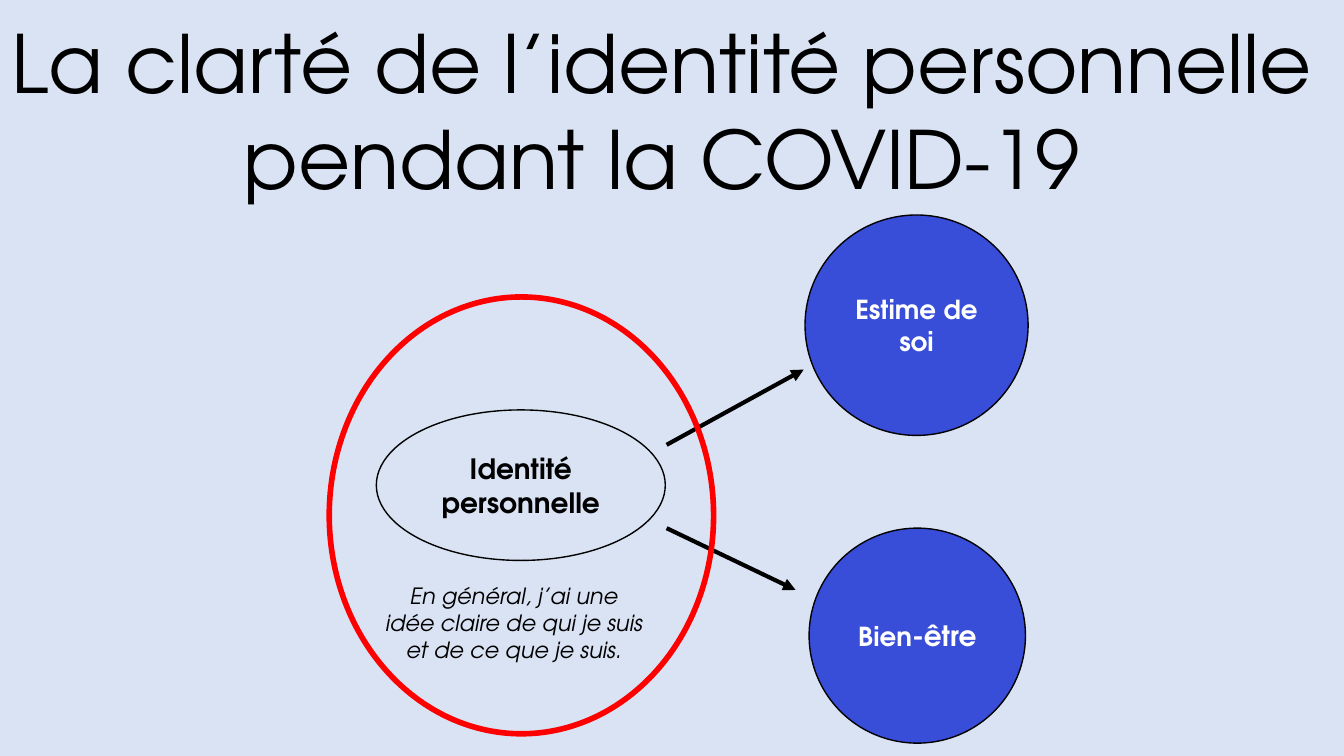
from lxml import etree
from pptx import Presentation
from pptx import util as u
from pptx.dml.color import RGBColor
from pptx.enum import shapes, text
from pptx.oxml import ns

FONT = "TeX Gyre Adventor"
SLIDE_WIDTH = 10
SLIDE_HEIGHT = SLIDE_WIDTH * 9 / 16
COLORS = {
    "background": "DAE3F3",
    "outcome": "384DD8",
    "ink": "000000",
    "light": "FFFFFF",
    "highlight": "FF0000",
}


def color(name):
    return RGBColor.from_string(COLORS[name])


def inches(values):
    return [u.Inches(value) for value in values]


def write(shape, runs, ink, anchor, bold=False, italic=False):
    """Fill a shape with one centred paragraph of (wording, size) runs."""
    frame = shape.text_frame
    frame.word_wrap = True
    frame.vertical_anchor = anchor
    frame.margin_left = frame.margin_right = u.Inches(0.1)
    frame.margin_top = frame.margin_bottom = u.Inches(0.1)
    paragraph = frame.paragraphs[0]
    paragraph.alignment = text.PP_ALIGN.CENTER
    for wording, size in runs:
        run = paragraph.add_run()
        run.text = wording
        run.font.name = FONT
        run.font.size = u.Pt(size)
        run.font.bold = bold
        run.font.italic = italic
        run.font.color.rgb = color(ink)


def add_panel(slide, kind, box, fill=None, line=None, width=0.75):
    panel = slide.shapes.add_shape(kind, *inches(box))
    panel.shadow.inherit = False
    if fill:
        panel.fill.solid()
        panel.fill.fore_color.rgb = color(fill)
    else:
        panel.fill.background()
    if line:
        panel.line.color.rgb = color(line)
        panel.line.width = u.Pt(width)
    else:
        panel.line.fill.background()
    return panel


def add_title(slide, wording):
    title = add_panel(slide, shapes.MSO_SHAPE.RECTANGLE,
                      (-0.15, 0, SLIDE_WIDTH + 0.15, SLIDE_HEIGHT),
                      "background")
    write(title, [(wording, 43)], "ink", text.MSO_ANCHOR.TOP)


def add_concept(slide, box, runs, fill, ink):
    concept = add_panel(slide, shapes.MSO_SHAPE.OVAL, box, fill, "ink")
    write(concept, runs, ink, text.MSO_ANCHOR.MIDDLE, bold=True)


def add_arrow(slide, start, end):
    arrow = slide.shapes.add_connector(
        shapes.MSO_CONNECTOR.STRAIGHT, *inches(start + end))
    arrow.line.color.rgb = color("ink")
    arrow.line.width = u.Pt(2.25)
    properties = arrow._element.spPr
    etree.SubElement(properties.find(ns.qn("a:ln")), ns.qn("a:tailEnd"),
                     type="triangle")
    etree.SubElement(properties, ns.qn("a:effectLst"))


def add_statement(slide, box, wording):
    statement = slide.shapes.add_textbox(*inches(box))
    write(statement, [(wording, 12)], "ink", text.MSO_ANCHOR.TOP, italic=True)
    statement.text_frame.auto_size = text.MSO_AUTO_SIZE.SHAPE_TO_FIT_TEXT


def main():
    deck = Presentation()
    deck.slide_width, deck.slide_height = inches((SLIDE_WIDTH, SLIDE_HEIGHT))
    slide = deck.slides.add_slide(deck.slide_layouts[6])

    add_title(slide, "La clarté de l’identité personnelle pendant la COVID-19")
    add_concept(slide, (6.02, 3.93, 1.61, 1.6),
                [("Bien", 14), ("-être", 15)], "outcome", "light")
    add_concept(slide, (2.8, 3.05, 2.15, 1.12),
                [("Identité personnelle", 15)], "background", "ink")
    add_arrow(slide, (4.96, 3.93), (5.92, 4.39))
    add_concept(slide, (5.99, 1.6, 1.66, 1.64),
                [("Estime de soi", 14)], "outcome", "light")
    add_arrow(slide, (4.96, 3.31), (5.98, 2.75))
    add_panel(slide, shapes.MSO_SHAPE.OVAL, (2.45, 2.21, 2.86, 3.25),
              line="highlight", width=3)
    add_statement(slide, (2.75, 4.23, 2.15, 0.81),
                  "En général, j’ai une idée claire de qui je suis "
                  "et de ce que je suis.")
    deck.save("out.pptx")


if __name__ == "__main__":
    main()
